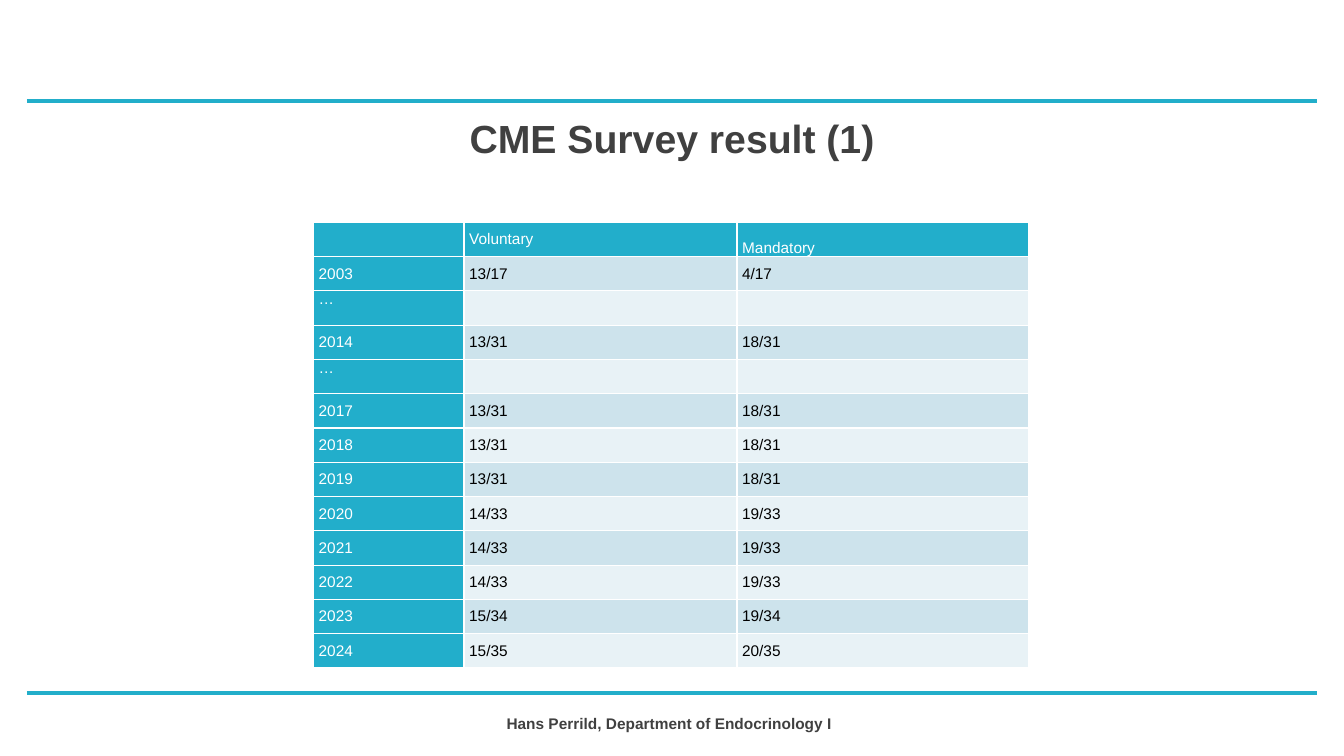
import pptx
import pptx.dml.color
import pptx.enum.shapes
import pptx.enum.text
import pptx.oxml
import pptx.oxml.ns
import pptx.util

RGBColor = pptx.dml.color.RGBColor
Anchor = pptx.enum.text.MSO_ANCHOR

SLIDE_WIDTH = pptx.util.Inches(13.33)
SLIDE_HEIGHT = pptx.util.Inches(7.5)
FONT = "Arial"
TEAL = RGBColor(0x22, 0xAE, 0xCB)
RULE_TEAL = RGBColor(0x22, 0xAE, 0xCA)
BAND_DARK = RGBColor(0xCD, 0xE3, 0xEC)
BAND_LIGHT = RGBColor(0xE8, 0xF2, 0xF6)
GREY = RGBColor(0x40, 0x40, 0x40)
WHITE = RGBColor(0xFF, 0xFF, 0xFF)
BLACK = RGBColor(0, 0, 0)

COLUMN_SHARES = (11.2, 20.31, 21.7)
ROW_SHARE = 4.54
SURVEY = (
    ("", "Voluntary", "Mandatory"),
    ("2003", "13/17", "4/17"),
    ("…", "", ""),
    ("2014", "13/31", "18/31"),
    ("…", "", ""),
    ("2017", "13/31", "18/31"),
    ("2018", "13/31", "18/31"),
    ("2019", "13/31", "18/31"),
    ("2020", "14/33", "19/33"),
    ("2021", "14/33", "19/33"),
    ("2022", "14/33", "19/33"),
    ("2023", "15/34", "19/34"),
    ("2024", "15/35", "20/35"),
)


def across(percent):
    """Length as a percentage of the slide width."""
    return round(SLIDE_WIDTH * percent / 100)


def down(percent):
    """Length as a percentage of the slide height."""
    return round(SLIDE_HEIGHT * percent / 100)


def add_run(paragraph, text, size, color, bold=False):
    run = paragraph.add_run()
    run.text = text
    run.font.name = FONT
    run.font.size = pptx.util.Pt(size)
    run.font.bold = bold
    run.font.color.rgb = color


def add_rule(slide, height):
    rule = slide.shapes.add_connector(
        pptx.enum.shapes.MSO_CONNECTOR.STRAIGHT,
        across(2), down(height), across(98), down(height))
    rule.line.color.rgb = RULE_TEAL
    rule.line.width = pptx.util.Pt(3)
    properties = rule._element.spPr
    properties.append(pptx.oxml.parse_xml(
        f"<a:effectLst {pptx.oxml.ns.nsdecls('a')}/>"))


def write_centred(shape, text, size, anchor):
    frame = shape.text_frame
    frame.word_wrap = True
    frame.auto_size = pptx.enum.text.MSO_AUTO_SIZE.NONE
    frame.vertical_anchor = anchor
    frame.margin_top = frame.margin_bottom = 0
    paragraph = frame.paragraphs[0]
    paragraph.alignment = pptx.enum.text.PP_ALIGN.CENTER
    add_run(paragraph, text, size, GREY, bold=True)


def add_title(slide, text):
    title = slide.shapes.title
    title.left, title.top = across(7.5), down(15.07)
    title.width, title.height = across(85), down(11.2)
    write_centred(title, text, 28, Anchor.TOP)


def add_author_line(slide, text):
    box = slide.shapes.add_textbox(
        across(21.45), down(92.4), across(56.7), down(6.67))
    write_centred(box, text, 11, Anchor.MIDDLE)


def add_cell_borders(cell):
    properties = cell._tc.get_or_add_tcPr()
    for side in "LRTB":
        properties.append(pptx.oxml.parse_xml(
            f"<a:ln{side} {pptx.oxml.ns.nsdecls('a')} w='{pptx.util.Pt(1)}'>"
            f"<a:solidFill><a:srgbClr val='{WHITE}'/></a:solidFill>"
            f"</a:ln{side}>"))


def cell_fill(row, column):
    if row == 0 or column == 0:
        return TEAL
    return BAND_DARK if row % 2 else BAND_LIGHT


def cell_anchor(text):
    return {"Mandatory": Anchor.BOTTOM, "…": Anchor.TOP}.get(text, Anchor.MIDDLE)


def format_cell(cell, text, fill):
    cell.margin_left = cell.margin_right = pptx.util.Inches(0.05)
    cell.margin_top = cell.margin_bottom = 0
    cell.vertical_anchor = cell_anchor(text)
    add_cell_borders(cell)
    cell.fill.solid()
    cell.fill.fore_color.rgb = fill
    paragraph = cell.text_frame.paragraphs[0]
    if text:
        add_run(paragraph, text, 11, WHITE if fill == TEAL else BLACK)
    else:
        paragraph.font.size = pptx.util.Pt(11)


def add_survey_table(slide):
    table = slide.shapes.add_table(
        len(SURVEY), len(COLUMN_SHARES), across(23.33), down(29.4),
        across(sum(COLUMN_SHARES)), down(ROW_SHARE * len(SURVEY))).table
    for column, share in zip(table.columns, COLUMN_SHARES):
        column.width = across(share)
    for row_index, values in enumerate(SURVEY):
        table.rows[row_index].height = down(ROW_SHARE)
        for column_index, text in enumerate(values):
            format_cell(table.cell(row_index, column_index), text,
                        cell_fill(row_index, column_index))


def main():
    presentation = pptx.Presentation()
    presentation.slide_width = SLIDE_WIDTH
    presentation.slide_height = SLIDE_HEIGHT
    title_only = presentation.slide_layouts[5]
    slide = presentation.slides.add_slide(title_only)
    for height in (13.4, 91.67):
        add_rule(slide, height)
    add_title(slide, "CME Survey result (1)")
    add_survey_table(slide)
    add_author_line(slide, "Hans Perrild, Department of Endocrinology I")
    presentation.save("out.pptx")


if __name__ == "__main__":
    main()
